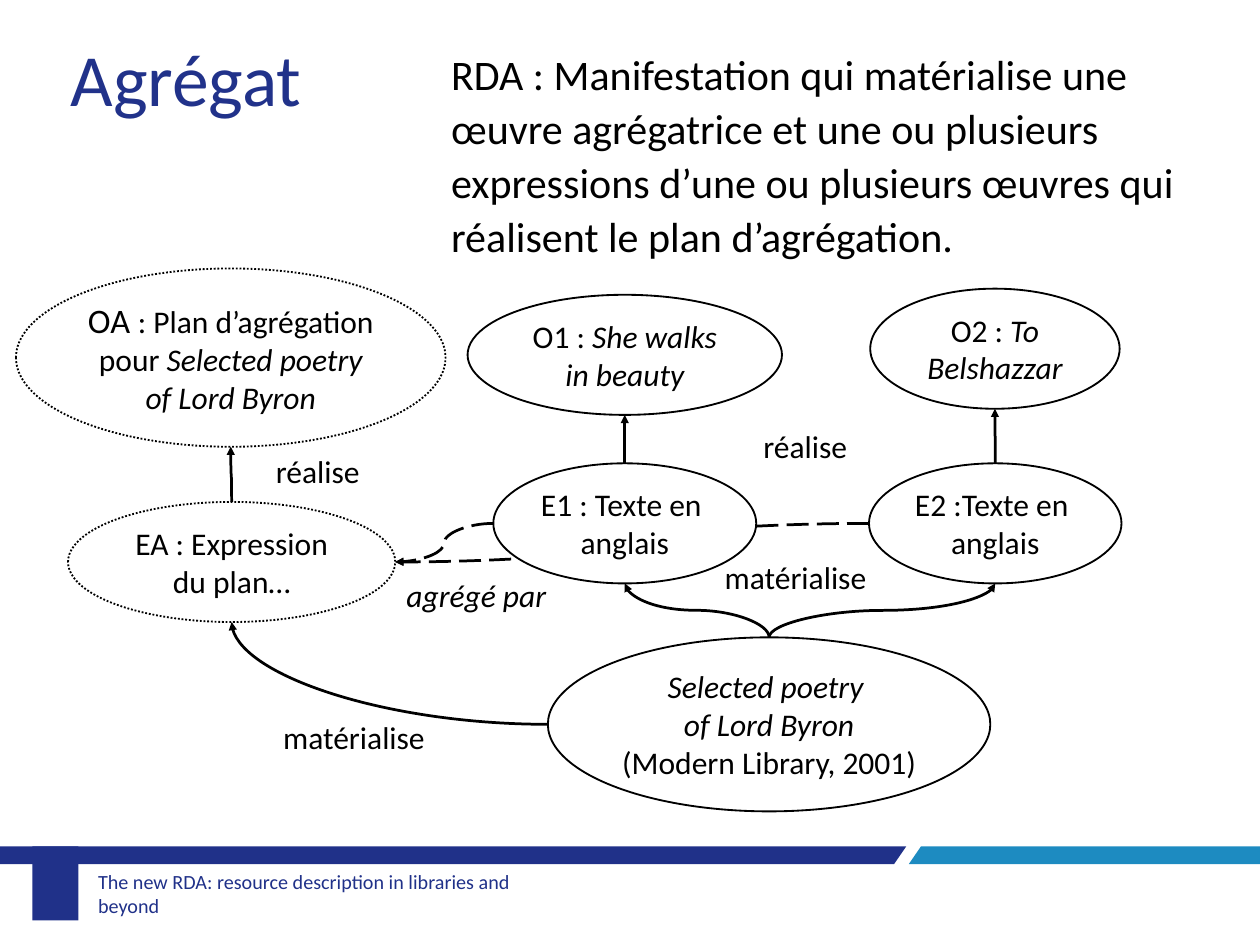
from lxml.etree import SubElement
from pptx import Presentation
from pptx.dml.color import RGBColor
from pptx.enum.dml import MSO_LINE
from pptx.enum.shapes import MSO_CONNECTOR, MSO_SHAPE
from pptx.enum.text import MSO_ANCHOR, PP_ALIGN
from pptx.oxml.ns import qn
from pptx.util import Pt

OVAL, RECT = MSO_SHAPE.OVAL, MSO_SHAPE.RECTANGLE
CURVE = MSO_CONNECTOR.CURVE
DOTS, DASH = MSO_LINE.ROUND_DOT, MSO_LINE.LONG_DASH
LEFT, MID = PP_ALIGN.LEFT, PP_ALIGN.CENTER
TOP, CENTER = MSO_ANCHOR.TOP, MSO_ANCHOR.MIDDLE

# Connection sites of an ellipse: index, share of width, share of height
SITES = {"top": (0, 0.5, 0), "left": (2, 0, 0.5),
         "foot": (4, 0.5, 1), "right": (6, 1, 0.5)}
NAVY, BLUE = "203189", "1D8BC1"


def paint(code):
    return RGBColor.from_string(code)


def write(frame, paras, size=25.7, color="000000", align=LEFT, italic=False,
          wrap=True, anchor=TOP, space=None):
    """Fill a frame; each paragraph is a list of strings or (string, format)."""
    frame.word_wrap = wrap
    frame.vertical_anchor = anchor
    for i, runs in enumerate(paras):
        para = frame.add_paragraph() if i else frame.paragraphs[0]
        para.alignment = align
        if space:
            para.line_spacing = space
        for item in runs:
            text, form = (item, {}) if isinstance(item, str) else item
            run = para.add_run()
            run.text = text
            run.font.name = "Calibri"
            run.font.size = Pt(form.get("size", size))
            run.font.italic = form.get("italic", italic)
            run.font.color.rgb = paint(color)


class Board:
    def __init__(self, slide, ink="000000", thin=1.5, bold=2.25):
        self.shapes = slide.shapes
        self.ink, self.thin, self.bold = ink, thin, bold

    def flat(self, shape, color):
        shape.shadow.inherit = False
        shape.fill.solid()
        shape.fill.fore_color.rgb = paint(color)
        shape.line.fill.background()

    def band(self, points, color):
        first, *rest = [(Pt(x), Pt(y)) for x, y in points]
        pen = self.shapes.build_freeform(*first, scale=1.0)
        pen.add_line_segments(rest, close=True)
        self.flat(pen.convert_to_shape(), color)

    def block(self, box, color):
        self.flat(self.shapes.add_shape(RECT, *map(Pt, box)), color)

    def label(self, box, paras, inset=None, **form):
        frame = self.shapes.add_textbox(*map(Pt, box)).text_frame
        if inset:
            frame.margin_left = frame.margin_right = Pt(inset[0])
            frame.margin_top = frame.margin_bottom = Pt(inset[1])
        write(frame, paras, **form)

    def oval(self, box, paras, fill=None, dash=None, wrap=True):
        shape = self.shapes.add_shape(OVAL, *map(Pt, box))
        shape.shadow.inherit = False
        if fill:
            shape.fill.solid()
            shape.fill.fore_color.rgb = paint(fill)
        else:
            shape.fill.background()
        shape.line.color.rgb = paint(self.ink)
        shape.line.width = Pt(self.thin)
        if dash:
            shape.line.dash_style = dash
        write(shape.text_frame, paras, align=MID, wrap=wrap)
        return shape

    def link(self, start, leave, end, reach, dash=None):
        """Join two ovals with a curved arrow between named sites."""
        ends = [(start, *SITES[leave]), (end, *SITES[reach])]
        (x1, y1), (x2, y2) = [
            (int(s.left + s.width * u), int(s.top + s.height * v))
            for s, _, u, v in ends]
        rise = leave == "top"
        if rise:  # the frame of an upward curve lies on its side
            mx, my = (x1 + x2) // 2, (y1 + y2) // 2
            w, h = abs(y2 - y1) // 2, abs(x2 - x1) // 2
            line = self.shapes.add_connector(CURVE, mx - w, my - h, mx + w, my + h)
            frame = line.element.spPr.find(qn("a:xfrm"))
            frame.set("rot", str(270 * 60000))
            if x2 < x1:
                frame.set("flipV", "1")
        else:
            line = self.shapes.add_connector(CURVE, x1, y1, x2, y2)
            if reach == "foot":
                geom = line.element.spPr.find(qn("a:prstGeom"))
                geom.set("prst", "curvedConnector2")
        line.line.color.rgb = paint(self.ink)
        line.line.width = Pt(self.bold)
        if dash:
            line.line.dash_style = dash
        SubElement(line.line._get_or_add_ln(), qn("a:tailEnd"), type="triangle")
        SubElement(line.element.spPr, qn("a:effectLst"))
        glue = line.element.nvCxnSpPr.cNvCxnSpPr
        for tag, (shape, site, _, _) in zip(("a:stCxn", "a:endCxn"), ends):
            SubElement(glue, qn(tag), id=str(shape.shape_id), idx=str(site))
        return line

    def sink(self, shape):
        shape.element.getparent().insert(2, shape.element)


def slant(text):
    return text, {"italic": True}


def main():
    deck = Presentation()
    deck.slide_width, deck.slide_height = Pt(1028), Pt(771)
    board = Board(deck.slides.add_slide(deck.slide_layouts[6]))

    # Footer
    top, low = 690.5, 705
    board.band([(739.5, top), (0, top), (0, low), (729.5, low)], NAVY)
    board.band([(1028, top), (751.5, top), (741.5, low), (1028, low)], BLUE)
    board.block((26.5, top, 37.5, 60.5), NAVY)
    board.label((75, 709, 397.5, 40),
                [["The new RDA: resource description in libraries and beyond"]],
                inset=(5, 3), size=16.4, color=NAVY, anchor=CENTER)

    # Title and definition
    board.label((50.5, 23, 204.5, 80), [["Agrégat"]],
                size=60, color="21328A", wrap=False)
    board.label((361, 33, 621, 185),
                [["RDA : Manifestation qui matérialise une œuvre agrégatrice et "
                  "une ou plusieurs expressions d’une ou plusieurs œuvres qui "
                  "réalisent le plan d’agrégation."]], size=34.3, space=1.07)

    # Works, expressions and manifestation
    book = board.oval((447, 520, 361, 142),
                      [[slant("Selected poetry ")], [slant("of Lord Byron")],
                       ["(Modern Library, 2001)"]], wrap=False)
    text1 = board.oval((402.5, 378, 214.5, 98),
                       [["E1 : Texte en "], ["anglais"]],
                       fill="FFFFFF", wrap=False)
    work1 = board.oval((381.5, 240.5, 256.5, 98),
                       [["O1 : ", slant("She walks in beauty")]])
    text2 = board.oval((709, 378, 206, 98),
                       [["E2 :Texte en "], ["anglais"]], wrap=False)
    work2 = board.oval((710, 235.5, 203.5, 98),
                       [["O2 : ", slant("To Belshazzar")]])
    plan = board.oval((55.5, 409.5, 267, 98),
                      [["EA : Expression du plan…"]], dash=DOTS)
    whole = board.oval((13, 219, 350.5, 145.5),
                       [[("OA ", {"size": 28}), ": Plan d’agrégation pour ",
                         slant("Selected poetry of Lord Byron")]], dash=DOTS)

    # Arrows; the dashed ones pass behind the ovals
    for text in (text2, text1):
        board.sink(board.link(text, "left", plan, "right", dash=DASH))
    for low_end, high_end in ((plan, whole), (text1, work1), (text2, work2),
                              (book, text2), (book, text1)):
        board.link(low_end, "top", high_end, "foot")
    board.link(book, "left", plan, "foot")

    # Arrow labels
    for x, y, wide, word, form in (
            (604, 345, 106, "réalise", {"align": MID}),
            (582, 452, 134, "matérialise", {"align": MID}),
            (218, 365, 106, "réalise", {}),
            (224, 582, 134, "matérialise", {}),
            (324.5, 466, 140.5, "agrégé par", {"italic": True})):
        board.label((x, y, wide, 38), [[word]], **form)

    deck.save("out.pptx")


if __name__ == "__main__":
    main()
